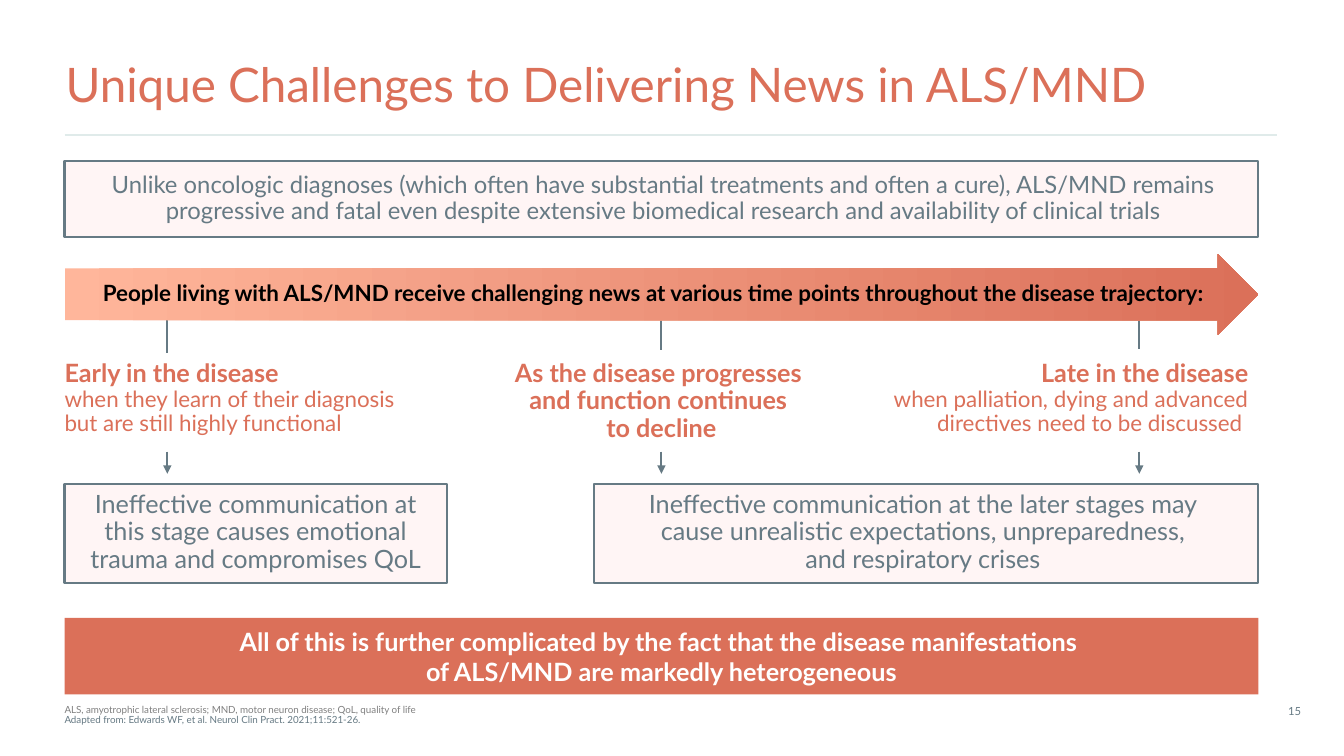
from lxml.etree import SubElement
from pptx import Presentation
from pptx.dml.color import RGBColor
from pptx.enum.shapes import MSO_CONNECTOR, MSO_SHAPE
from pptx.enum.text import MSO_ANCHOR, PP_ALIGN
from pptx.oxml.ns import qn
from pptx.util import Inches, Pt

CORAL = RGBColor(0xDB, 0x70, 0x59)
PEACH = RGBColor(0xFF, 0xB6, 0x9B)
BLUSH = RGBColor(0xFF, 0xF5, 0xF5)
SLATE = RGBColor(0x66, 0x7A, 0x84)
GRAY = RGBColor(0x80, 0x80, 0x80)
PALE = RGBColor(0xE0, 0xEB, 0xEA)
BLACK = RGBColor(0, 0, 0)
WHITE = RGBColor(0xFF, 0xFF, 0xFF)
FONT = "Lato"
LEFT, FULL_WIDTH = 0.64, 11.84
CENTER = PP_ALIGN.CENTER

# Content
TITLE = "Unique Challenges to Delivering News in ALS/MND"
INTRO = ["Unlike oncologic diagnoses (which often have substantial treatments and often a cure), "
         "ALS/MND remains progressive and fatal even despite extensive biomedical research "
         "and availability of clinical trials"]
TIMELINE = ["People living with ALS/MND receive challenging news at various time points "
            "throughout the disease trajectory:"]
# left, width, alignment, marker x, marker bottom, bold lines, regular text
STAGES = [
    (LEFT, 3.43, PP_ALIGN.LEFT, 1.66, 3.5, ["Early in the disease "],
     "when they learn of their diagnosis but are still highly functional"),
    (5.03, 3.06, CENTER, 6.56, 3.47,
     ["As the disease progresses ", "and function continues ", "to decline"], ""),
    (8.36, 4.02, PP_ALIGN.RIGHT, 11.3, 3.46, ["Late in the disease"],
     "when palliation, dying and advanced directives need to be discussed "),
]
# left, width, lines
EFFECTS = [
    (LEFT, 3.79, ["Ineffective communication at this stage causes emotional "
                  "trauma and compromises QoL"]),
    (5.89, 6.59, ["Ineffective communication at the later stages may ",
                  "cause unrealistic expectations, unpreparedness, ",
                  "and respiratory crises "]),
]
CONCLUSION = ["All of this is further complicated by the fact that the disease manifestations ",
              "of ALS/MND are markedly heterogeneous"]
FOOTNOTES = [
    ("ALS, amyotrophic lateral sclerosis; MND, motor neuron disease; QoL, quality of life", GRAY),
    ("Adapted from: Edwards WF, et al. Neurol Clin Pract. 2021;11:521-26.", SLATE),
]
PAGE_NUMBER = "15"


def set_font(font, size, color, bold=False):
    font.name, font.size, font.bold = FONT, Pt(size), bold
    font.color.rgb = color


def set_frame(frame, margins=(0, 0, 0, 0), anchor=MSO_ANCHOR.TOP):
    frame.word_wrap = True
    frame.vertical_anchor = anchor
    (frame.margin_left, frame.margin_top,
     frame.margin_right, frame.margin_bottom) = map(Inches, margins)


def write_lines(paragraph, lines, size, color, bold=False, align=CENTER, spacing=0.9):
    paragraph.alignment, paragraph.line_spacing = align, spacing
    set_font(paragraph.font, size, color, bold)
    for index, line in enumerate(lines):
        if index:
            paragraph.add_line_break()
        paragraph.add_run().text = line


def add_text_box(left, top, width, height, anchor=MSO_ANCHOR.TOP):
    box = slide.shapes.add_textbox(*map(Inches, (left, top, width, height)))
    set_frame(box.text_frame, anchor=anchor)
    return box.text_frame


def add_panel(left, top, width, height, lines, size, margins, kind=MSO_SHAPE.RECTANGLE,
              fill=BLUSH, line=SLATE, color=SLATE, bold=False, spacing=0.9,
              anchor=MSO_ANCHOR.TOP):
    panel = slide.shapes.add_shape(kind, *map(Inches, (left, top, width, height)))
    panel.shadow.inherit = False
    panel.fill.solid()
    panel.fill.fore_color.rgb = fill
    if line is None:
        panel.line.fill.background()
    else:
        panel.line.color.rgb = line
        panel.line.width = Pt(1.5)
    set_frame(panel.text_frame, margins, anchor)
    write_lines(panel.text_frame.paragraphs[0], lines, size, color, bold, spacing=spacing)
    return panel


def add_line(x1, y1, x2, y2, color=SLATE, arrow=False):
    connector = slide.shapes.add_connector(
        MSO_CONNECTOR.STRAIGHT, *map(Inches, (x1, y1, x2, y2)))
    connector.line.color.rgb = color
    connector.line.width = Pt(1.5)
    if arrow:
        SubElement(connector.line._get_or_add_ln(), qn("a:tailEnd"), type="triangle")
    SubElement(connector._element.spPr, qn("a:effectLst"))


presentation = Presentation()
presentation.slide_width, presentation.slide_height = Inches(13.33), Inches(7.5)
slide = presentation.slides.add_slide(presentation.slide_layouts[5])

# Title and rule
title = slide.shapes.title
title.left, title.top, title.width, title.height = map(Inches, (0.65, 0.61, 12.03, 0.51))
set_frame(title.text_frame, anchor=MSO_ANCHOR.MIDDLE)
write_lines(title.text_frame.paragraphs[0], [TITLE], 34, CORAL, align=PP_ALIGN.LEFT)
add_line(LEFT, 1.34, 12.67, 1.34, PALE)

# Introduction
add_panel(LEFT, 1.6, FULL_WIDTH, 0.75, INTRO, 17, (0.2, 0.12, 0.16, 0.12))

# Stages with their markers and arrows
for left, width, align, marker, marker_bottom, heading, detail in STAGES:
    add_line(marker, 3.1, marker, marker_bottom)
    add_line(marker, 4.48, marker, 4.7, arrow=True)
    paragraph = add_text_box(left, 3.58, width, 0.8).paragraphs[0]
    write_lines(paragraph, heading, 18, CORAL, True, align)
    if detail:
        paragraph.add_line_break()
        run = paragraph.add_run()
        run.text = detail
        set_font(run.font, 16, CORAL)

# Timeline arrow
timeline = add_panel(LEFT, 2.52, FULL_WIDTH, 0.8, TIMELINE, 16, (0.2, 0.05, 0.1, 0.08),
                     MSO_SHAPE.RIGHT_ARROW, line=None, color=BLACK, bold=True, spacing=1.0,
                     anchor=MSO_ANCHOR.MIDDLE)
timeline.adjustments[0], timeline.adjustments[1] = 0.64, 0.5
timeline.fill.gradient()
timeline.fill.gradient_angle = 0
for stop, color in zip(timeline.fill.gradient_stops, (PEACH, CORAL)):
    stop.color.rgb = color

# Effects and conclusion
for left, width, lines in EFFECTS:
    add_panel(left, 4.8, width, 0.98, lines, 18, (0.16, 0.08, 0.16, 0.08))
add_panel(LEFT, 6.13, FULL_WIDTH, 0.76, CONCLUSION, 18, (0.2, 0.08, 0.2, 0.08),
          fill=CORAL, line=None, color=WHITE, bold=True, spacing=1.0)

# Footnotes and page number
footer = add_text_box(LEFT, 6.99, 11.13, 0.21, MSO_ANCHOR.BOTTOM)
for index, (note, color) in enumerate(FOOTNOTES):
    paragraph = footer.add_paragraph() if index else footer.paragraphs[0]
    write_lines(paragraph, [note], 7, color, align=PP_ALIGN.LEFT)
number = add_text_box(12.67, 6.93, 0.34, 0.24, MSO_ANCHOR.MIDDLE)
write_lines(number.paragraphs[0], [PAGE_NUMBER], 8, SLATE, spacing=1.0)

presentation.save("out.pptx")
